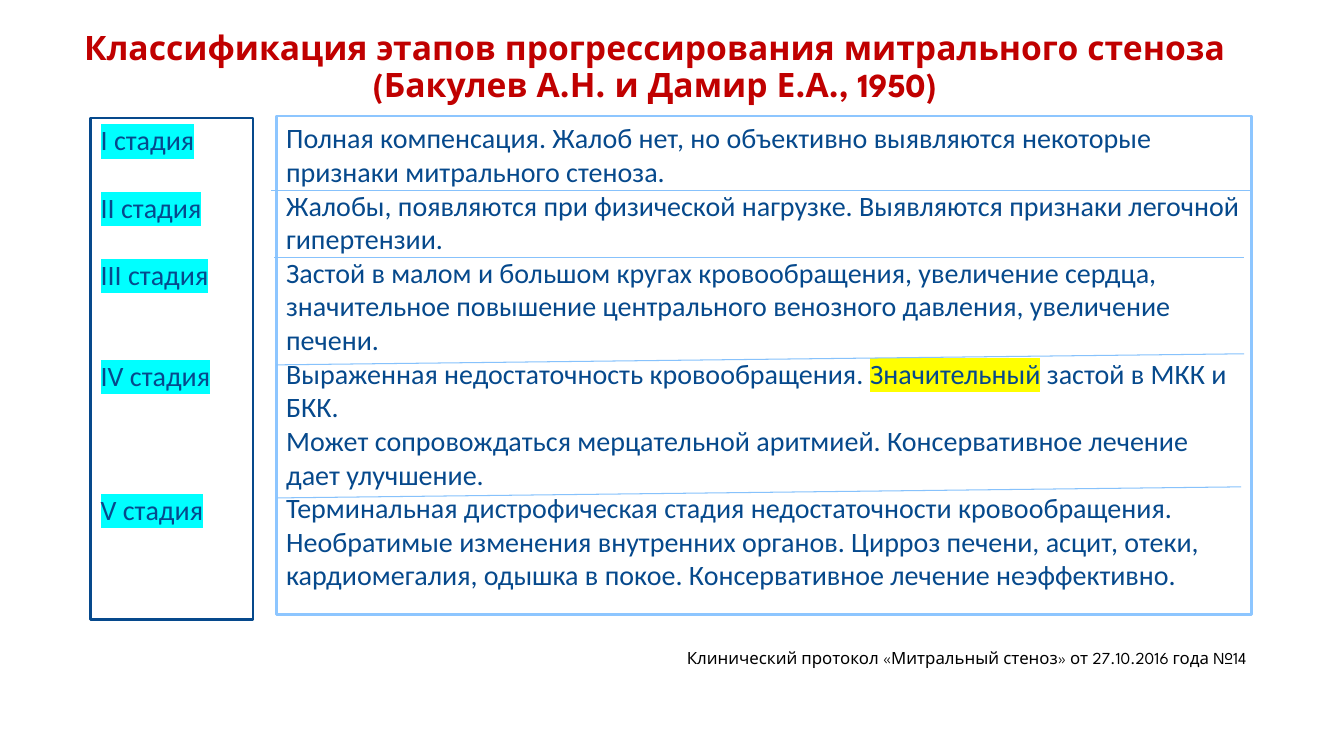
import pptx
import pptx.util
import pptx.dml.color
import pptx.enum.shapes
import pptx.enum.text
import pptx.oxml.ns
from lxml import etree

PX = 9144
COLORS = {
    "title": "C00000", "text": "06498C", "black": "000000", "white": "FFFFFF",
    "frame": "8DC6FF", "rule": "87C2FC", "cyan": "00FFFF", "yellow": "FFFF00",
}
LINE_HEIGHT = 24


def rgb(name):
    return pptx.dml.color.RGBColor.from_string(COLORS[name])


def px(*lengths):
    return [length * PX for length in lengths]


class SlideBuilder:
    def __init__(self, presentation):
        self.slide = presentation.slides.add_slide(presentation.slide_layouts[6])

    def add_run(self, paragraph, text, font, size, color, bold=False, highlight=None):
        run = paragraph.add_run()
        run.text = text
        run.font.size = pptx.util.Pt(size)
        run.font.bold = bold
        run.font.color.rgb = rgb(color)
        if highlight:
            mark = etree.SubElement(run.font._element, pptx.oxml.ns.qn("a:highlight"))
            etree.SubElement(mark, pptx.oxml.ns.qn("a:srgbClr"), val=COLORS[highlight])
        run.font.name = font

    def add_heading(self, box, lines, size, color, bold, anchor):
        shape = self.slide.shapes.add_textbox(*px(*box))
        frame = shape.text_frame
        frame.word_wrap = True
        frame.vertical_anchor = anchor
        for index, line in enumerate(lines):
            paragraph = frame.paragraphs[0] if index == 0 else frame.add_paragraph()
            paragraph.alignment = pptx.enum.text.PP_ALIGN.CENTER
            paragraph.line_spacing = 0.9
            self.add_run(paragraph, line, "League Spartan", size, color, bold)

    def add_panel(self, box, border, paragraphs):
        shape = self.slide.shapes.add_shape(
            pptx.enum.shapes.MSO_SHAPE.RECTANGLE, *px(*box))
        shape.shadow.inherit = False
        shape.fill.solid()
        shape.fill.fore_color.rgb = rgb("white")
        shape.line.color.rgb = rgb(border)
        shape.line.width = pptx.util.Pt(2)
        frame = shape.text_frame
        frame.word_wrap = True
        frame.vertical_anchor = pptx.enum.text.MSO_ANCHOR.TOP
        for index, (lines_before, runs) in enumerate(paragraphs):
            paragraph = frame.paragraphs[0] if index == 0 else frame.add_paragraph()
            paragraph.alignment = pptx.enum.text.PP_ALIGN.LEFT
            paragraph.line_spacing = pptx.util.Pt(LINE_HEIGHT)
            paragraph.space_before = pptx.util.Pt(lines_before * LINE_HEIGHT)
            for text, highlight in runs:
                self.add_run(paragraph, text, "Calibri", 20, "text", highlight=highlight)

    def add_rule(self, *ends):
        connector = self.slide.shapes.add_connector(
            pptx.enum.shapes.MSO_CONNECTOR.STRAIGHT, *px(*ends))
        connector.line.color.rgb = rgb("rule")
        connector.line.width = pptx.util.Pt(0.75)
        etree.SubElement(connector._element.spPr, pptx.oxml.ns.qn("a:effectLst"))


STAGES = [("I", 0), ("II", 1), ("III", 1), ("IV", 2), ("V", 3)]
DESCRIPTIONS = [
    [("Полная компенсация. Жалоб нет, но объективно выявляются некоторые "
      "признаки митрального стеноза.", None)],
    [("Жалобы, появляются при физической нагрузке. Выявляются признаки "
      "легочной гипертензии.", None)],
    [("Застой в малом и большом кругах кровообращения, увеличение сердца, "
      "значительное повышение центрального венозного давления, увеличение "
      "печени.", None)],
    [("Выраженная недостаточность кровообращения. ", None),
     ("Значительный", "yellow"),
     (" застой в МКК и БКК.", None)],
    [("Может сопровождаться мерцательной аритмией. Консервативное лечение "
      "дает улучшение.", None)],
    [("Терминальная дистрофическая стадия недостаточности кровообращения. "
      "Необратимые изменения внутренних органов. Цирроз печени, aсцит, отеки, "
      "кардиомегалия, одышка в покое. Консервативное лечение неэффективно.", None)],
]
RULES = [
    (269, 189, 1240, 189),
    (272, 255, 1234, 255),
    (274, 362, 1234, 351),
    (275, 494, 1231, 483),
]


def main():
    presentation = pptx.Presentation()
    presentation.slide_width, presentation.slide_height = px(1333, 750)
    builder = SlideBuilder(presentation)
    builder.add_heading(
        (42, 23, 1215, 89),
        ["Классификация этапов прогрессирования митрального стеноза",
         "(Бакулев А.Н. и Дамир Е.А., 1950)"],
        24, "title", True, pptx.enum.text.MSO_ANCHOR.MIDDLE)
    builder.add_heading(
        (640, 640, 638, 60),
        ["Клинический протокол «Митральный стеноз» от 27.10.2016 года №14"],
        12, "black", False, pptx.enum.text.MSO_ANCHOR.TOP)
    builder.add_panel(
        (90, 117, 161, 498), "text",
        [(gap, [(f"{numeral} стадия", "cyan")]) for numeral, gap in STAGES])
    builder.add_panel(
        (274, 115, 967, 495), "frame", [(0, runs) for runs in DESCRIPTIONS])
    for ends in RULES:
        builder.add_rule(*ends)
    presentation.save("out.pptx")


if __name__ == "__main__":
    main()
